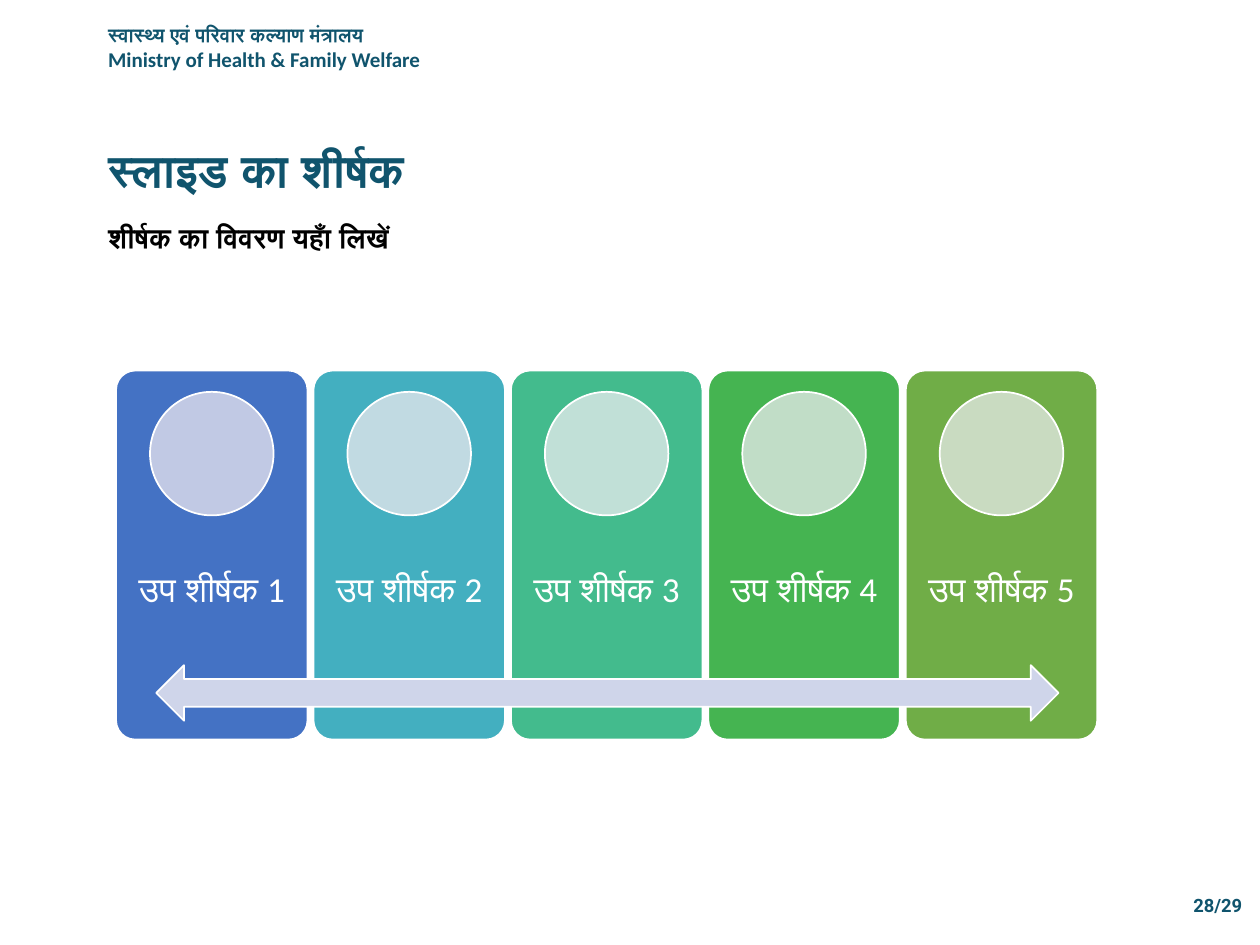
"""Build a ministry slide with five subheading cards joined by a double arrow."""
from pptx import Presentation
from pptx import util as u
from pptx.dml.color import RGBColor
from pptx.enum import shapes, text

COLORS = {
    "teal": "10546D",
    "black": "000000",
    "white": "FFFFFF",
    "arrow": "CFD5EA",
    "cards": ["4472C4", "43AFC0", "43BB8D", "45B451", "70AD47"],
    "circles": ["C1C9E4", "C1DAE2", "C1E0D7", "C1DDC7", "C9DBC1"],
}
CARD_LEFT, CARD_TOP, CARD_W, CARD_H = 2.34, 7.47, 3.86, 7.44
CARD_PITCH = 3.98
CIRCLE = 2.49


def add_text(s, box, lines, sizes, font="Calibri", color=COLORS["teal"], bold=True,
             align=text.PP_ALIGN.LEFT, anchor=text.MSO_ANCHOR.TOP,
             spacing=None, inset=None):
    sp = s.shapes.add_textbox(*(u.Cm(v) for v in box))
    tf = sp.text_frame
    tf.word_wrap = True
    tf.vertical_anchor = anchor
    if inset is not None:
        tf.margin_left = tf.margin_right = u.Cm(inset)
        tf.margin_top = tf.margin_bottom = u.Cm(inset)
    for i, (line, size) in enumerate(zip(lines, sizes)):
        p = tf.add_paragraph() if i else tf.paragraphs[0]
        p.alignment = align
        if spacing is not None:
            p.line_spacing = spacing
        r = p.add_run()
        r.text = line
        r.font.name = font
        r.font.size = u.Pt(size)
        r.font.bold = bold
        r.font.color.rgb = RGBColor.from_string(color)
    return sp


def add_shape(s, kind, box, fill):
    sp = s.shapes.add_shape(kind, *(u.Cm(v) for v in box))
    sp.shadow.inherit = False
    sp.fill.solid()
    sp.fill.fore_color.rgb = RGBColor.from_string(fill)
    sp.line.color.rgb = RGBColor.from_string(COLORS["white"])
    sp.line.width = u.Pt(1)
    return sp


def add_card(s, i, fill, circle_fill):
    left = CARD_LEFT + i * CARD_PITCH
    card = add_shape(s, shapes.MSO_SHAPE.ROUNDED_RECTANGLE,
                     (left, CARD_TOP, CARD_W, CARD_H), fill)
    card.adjustments[0] = 0.1
    add_text(s, (left, 10.44, CARD_W, 2.97), [f"उप शीर्षक {i + 1}"], [20],
             color=COLORS["white"], bold=False, align=text.PP_ALIGN.CENTER,
             anchor=text.MSO_ANCHOR.MIDDLE, spacing=0.9, inset=0.4)
    add_shape(s, shapes.MSO_SHAPE.OVAL,
              (left + (CARD_W - CIRCLE) / 2, 7.9, CIRCLE, CIRCLE), circle_fill)


def main():
    prs = Presentation()
    prs.slide_width, prs.slide_height = u.Cm(25.4), u.Cm(19.05)
    s = prs.slides.add_slide(prs.slide_layouts[6])

    add_text(s, (23.7, 17.91, 1.7, 0.71), ["28/29"], [10.5], font="Roboto",
             align=text.PP_ALIGN.CENTER)
    add_text(s, (1.93, 0.33, 8.71, 1.24),
             ["स्वास्थ्य एवं परिवार कल्याण मंत्रालय",
              "Ministry of Health & Family Welfare"], [11.2, 12])
    add_text(s, (1.93, 2.95, 11.68, 1.19), ["स्लाइड का शीर्षक"], [26],
             font="Roboto", spacing=0.8)
    add_text(s, (1.93, 4.57, 13.69, 0.94), ["शीर्षक का विवरण यहाँ लिखें"], [16],
             color=COLORS["black"], spacing=u.Pt(12.4))

    for i, fills in enumerate(zip(COLORS["cards"], COLORS["circles"])):
        add_card(s, i, *fills)
    add_shape(s, shapes.MSO_SHAPE.LEFT_RIGHT_ARROW,
              (3.15, 13.41, 18.19, 1.12), COLORS["arrow"])

    prs.save("out.pptx")


if __name__ == "__main__":
    main()
